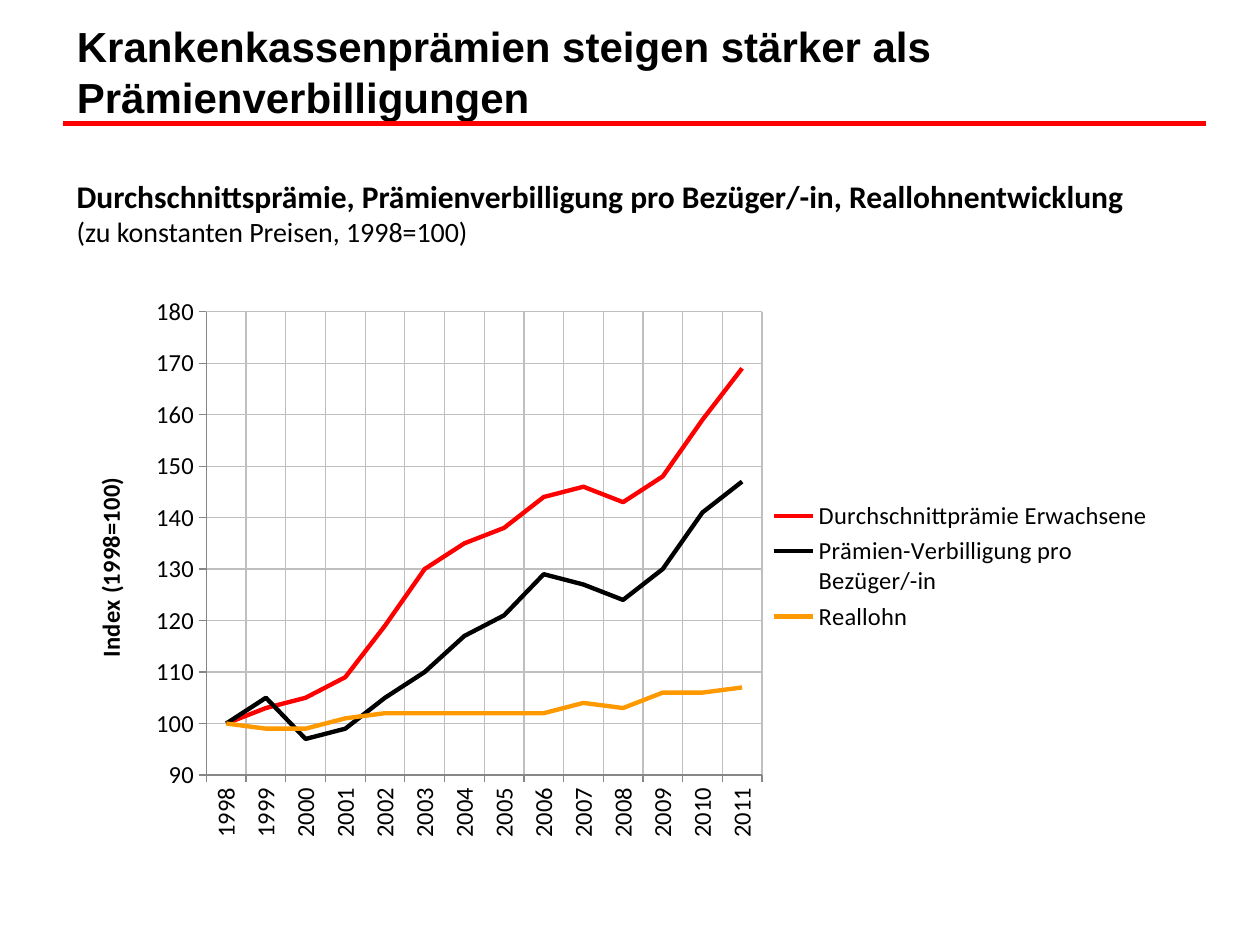
from lxml.etree import SubElement
from pptx import Presentation
from pptx.chart.data import CategoryChartData as Data
from pptx.dml.color import RGBColor
from pptx.enum.chart import XL_CHART_TYPE as Kind
from pptx.enum.chart import XL_LEGEND_POSITION as Side
from pptx.enum.chart import XL_MARKER_STYLE as Mark
from pptx.enum.chart import XL_TICK_MARK as Tick
from pptx.enum.shapes import MSO_CONNECTOR as Conn
from pptx.enum.text import MSO_ANCHOR as Anchor
from pptx.enum.text import MSO_AUTO_SIZE as Fit
from pptx.enum.text import PP_ALIGN as Align
from pptx.oxml import parse_xml
from pptx.oxml.ns import nsdecls, qn
from pptx.util import Inches, Pt

BLACK = RGBColor(0x00, 0x00, 0x00)
RED = RGBColor(0xFF, 0x00, 0x00)
ORANGE = RGBColor(0xFF, 0x99, 0x00)
GRID = RGBColor(0xBF, 0xBF, 0xBF)
AXIS = RGBColor(0x86, 0x86, 0x86)

YEARS = [str(year) for year in range(1998, 2012)]
SERIES = [
    ("Durchschnittprämie Erwachsene", RED,
     (100, 103, 105, 109, 119, 130, 135, 138, 144, 146, 143, 148, 159, 169)),
    ("Prämien-Verbilligung pro Bezüger/-in", BLACK,
     (100, 105, 97, 99, 105, 110, 117, 121, 129, 127, 124, 130, 141, 147)),
    ("Reallohn", ORANGE,
     (100, 99, 99, 101, 102, 102, 102, 102, 102, 104, 103, 106, 106, 107)),
]


def style(font, name, size, bold=False):
    font.name, font.size, font.bold = name, Pt(size), bold
    font.color.rgb = BLACK


def stroke(line, color, width):
    line.color.rgb = color
    line.width = Pt(width)


def add_title(slide, left, top, width, height):
    title = slide.shapes.title
    title.left, title.top, title.width, title.height = left, top, width, height
    frame = title.text_frame
    frame.text = "Krankenkassenprämien steigen stärker als Prämienverbilligungen"
    frame.word_wrap = True
    frame.auto_size = Fit.NONE
    frame.vertical_anchor = Anchor.MIDDLE
    para = frame.paragraphs[0]
    para.alignment = Align.LEFT
    style(para.font, "Arial", 24, True)


def add_rule(slide, left, top, width):
    rule = slide.shapes.add_connector(
        Conn.STRAIGHT, left, top, left + width, top)
    stroke(rule.line, RED, 2.5)
    SubElement(rule._element.spPr, qn("a:effectLst"))


def add_heading(slide, left, top, width, height):
    frame = slide.shapes.add_textbox(left, top, width, height).text_frame
    frame.word_wrap = False
    frame.auto_size = Fit.SHAPE_TO_FIT_TEXT
    frame.vertical_anchor = Anchor.MIDDLE
    frame.margin_bottom = Inches(0.1)
    frame.text = ("Durchschnittsprämie, Prämienverbilligung pro Bezüger/-in, "
                  "Reallohnentwicklung\n(zu konstanten Preisen, 1998=100)")
    head, note = frame.paragraphs
    style(head.font, "Calibri", 18, True)
    style(note.font, "Calibri", 16)


def fix_plot(chart, x, y, w, h):
    """Pin the inner plot area, in fractions of the chart."""
    area = chart._chartSpace.chart.plotArea
    for old in area.findall(qn("c:layout")):
        area.remove(old)
    sizes = "".join(f'<c:{tag} val="{val}"/>'
                    for tag, val in zip("xywh", (x, y, w, h)))
    area.insert(0, parse_xml(
        f'<c:layout {nsdecls("c")}><c:manualLayout>'
        '<c:layoutTarget val="inner"/><c:xMode val="edge"/>'
        f'<c:yMode val="edge"/>{sizes}</c:manualLayout></c:layout>'))


def style_axis(axis):
    axis.has_major_gridlines = True
    stroke(axis.major_gridlines.format.line, GRID, 0.75)
    stroke(axis.format.line, AXIS, 0.75)
    axis.major_tick_mark = Tick.OUTSIDE
    axis.minor_tick_mark = Tick.NONE
    style(axis.tick_labels.font, "Calibri", 14)


def add_index_chart(slide, left, top, width, height):
    data = Data(number_format="0")
    data.categories = YEARS
    for name, _, vals in SERIES:
        data.add_series(name, vals)
    chart = slide.shapes.add_chart(
        Kind.LINE, left, top, width, height, data).chart
    style(chart.font, "Calibri", 14)
    chart.has_title = False
    chart.has_legend = True
    chart.legend.position = Side.RIGHT
    chart.legend.include_in_layout = False
    style(chart.legend.font, "Calibri", 14)

    years, index = chart.category_axis, chart.value_axis
    style_axis(years)
    style_axis(index)
    years.tick_labels._element.txPr.bodyPr.set("rot", "-5400000")
    index.minimum_scale, index.maximum_scale = 90, 180
    index.major_unit = 10
    index.tick_labels.number_format = "0"
    index.tick_labels.number_format_is_linked = False
    frame = index.axis_title.text_frame
    frame.text = "Index (1998=100)"
    style(frame.paragraphs[0].font, "Calibri", 14, True)

    plot = chart.plots[0]
    plot.vary_by_categories = False
    for line, (_, color, _) in zip(plot.series, SERIES):
        line.smooth = False
        line.marker.style = Mark.NONE
        stroke(line.format.line, color, 2.5)
    fix_plot(chart, 0.137, 0.05, 0.5, 0.819)


def main():
    deck = Presentation()
    deck.slide_width, deck.slide_height = Inches(10), Inches(7.5)
    slide = deck.slides.add_slide(deck.slide_layouts[5])
    add_rule(slide, Inches(0.5), Inches(0.98), Inches(9.07))
    add_title(slide, Inches(0.51), Inches(0.13), Inches(9), Inches(0.87))
    add_heading(slide, Inches(0.51), Inches(1.35), Inches(9.28), Inches(0.72))
    add_index_chart(
        slide, Inches(0.43), Inches(2.25), Inches(8.82), Inches(4.49))
    deck.save("out.pptx")


if __name__ == "__main__":
    main()
